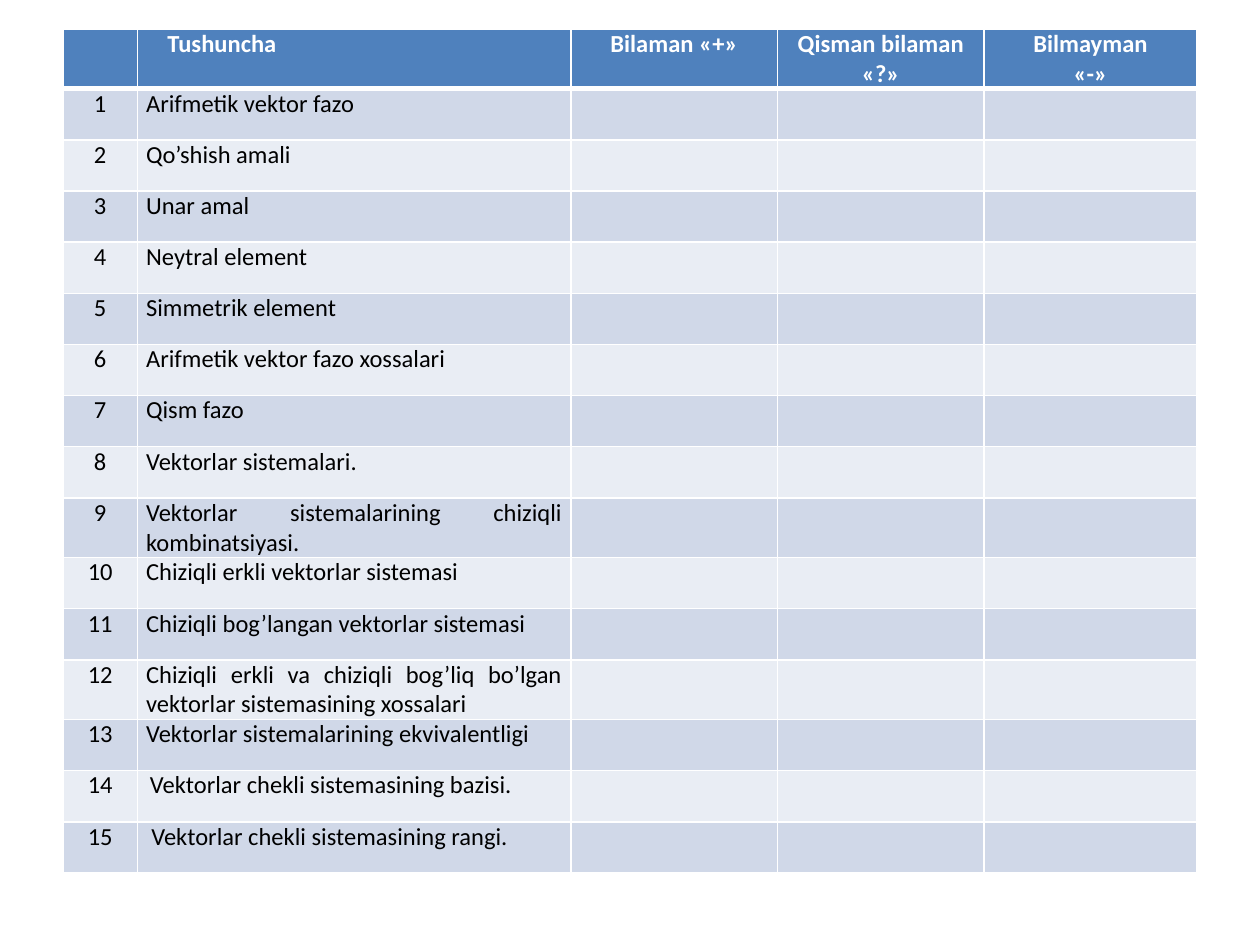
from dataclasses import dataclass

from lxml import etree
from pptx import Presentation
from pptx.dml.color import RGBColor
from pptx.enum.text import PP_ALIGN
from pptx.oxml.ns import qn
from pptx.util import Pt

LEFT, MID, JUST = PP_ALIGN.LEFT, PP_ALIGN.CENTER, PP_ALIGN.JUSTIFY
BLANK = 6

WIDTHS = (42.5, 247.7, 118.1, 118.1, 121.6)
ROW = 29.25
HEADS = ("", "Tushuncha", "Bilaman «+»", "Qisman bilaman\n«?»", "Bilmayman\n«-»")
TERMS = (
    "Arifmetik vektor fazo",
    "Qo’shish amali",
    "Unar amal",
    "Neytral element",
    "Simmetrik element",
    "Arifmetik vektor fazo xossalari",
    "Qism fazo",
    "Vektorlar sistemalari.",
    "Vektorlar sistemalarining chiziqli kombinatsiyasi.",
    "Chiziqli erkli vektorlar sistemasi",
    "Chiziqli bog’langan vektorlar sistemasi",
    "Chiziqli erkli va chiziqli bog’liq bo’lgan vektorlar sistemasining xossalari",
    "Vektorlar sistemalarining ekvivalentligi",
    "Vektorlar chekli sistemasining bazisi.",
    "Vektorlar chekli sistemasining rangi.",
)
# First-line indents by (row, column)
INDENTS = {(0, 1): 12.2, (14, 1): 2.2, (15, 1): 3}


@dataclass(frozen=True)
class Theme:
    font: str = "Calibri"
    size: float = 14
    head: str = "4F81BD"
    bands: tuple = ("E9EDF4", "D0D8E8")
    light: str = "FFFFFF"
    dark: str = "000000"
    thin: float = 1
    thick: float = 3


class Deck:
    """Holds the theme and the current slide."""

    def __init__(self, theme, slide):
        self.theme, self.slide = theme, slide

    def edge(self, cell, sides):
        """Draw cell borders; must run before the fill, as the schema orders them."""
        props = cell._tc.get_or_add_tcPr()
        for side, width in sides.items():
            line = etree.SubElement(props, qn(f"a:ln{side}"), w=str(Pt(width)))
            fill = etree.SubElement(line, qn("a:solidFill"))
            etree.SubElement(fill, qn("a:srgbClr"), val=self.theme.light)

    def label(self, cell, text, align, color, bold, indent):
        form = {"margin_left": Pt(5), "margin_right": Pt(5),
                "margin_top": 0, "margin_bottom": 0}
        for name, value in form.items():
            setattr(cell, name, value)
        cell.text = text
        face = {"name": self.theme.font, "size": Pt(self.theme.size), "bold": bold}
        for para in cell.text_frame.paragraphs:
            para.alignment = align
            for name, value in face.items():
                setattr(para.font, name, value)
            para.font.color.rgb = RGBColor.from_string(color)
            if indent:
                props = para._p.get_or_add_pPr()
                props.set("marL", "0")
                props.set("indent", str(Pt(indent)))

    def table(self, left, top, widths, height, rows, indents):
        """Build a table with one header row and banded body rows."""
        look = self.theme
        grid = self.slide.shapes.add_table(
            len(rows), len(widths), Pt(left), Pt(top),
            Pt(sum(widths)), Pt(height * len(rows))).table
        for col, width in zip(grid.columns, widths):
            col.width = Pt(width)
        for r, texts in enumerate(rows):
            grid.rows[r].height = Pt(height)
            head = r == 0
            shade = look.head if head else look.bands[r % 2]
            color = look.light if head else look.dark
            sides = {"L": look.thin, "R": look.thin,
                     "T": look.thick if r == 1 else look.thin,
                     "B": look.thick if head else look.thin}
            for c, text in enumerate(texts):
                cell = grid.cell(r, c)
                self.edge(cell, sides)
                cell.fill.solid()
                cell.fill.fore_color.rgb = RGBColor.from_string(shade)
                align = MID if c != 1 else LEFT if head else JUST
                self.label(cell, text, align, color, head, indents.get((r, c)))


def main():
    show = Presentation()
    show.slide_width, show.slide_height = Pt(720), Pt(540)
    deck = Deck(Theme(), show.slides.add_slide(show.slide_layouts[BLANK]))
    body = [(str(n), term, "", "", "") for n, term in enumerate(TERMS, 1)]
    deck.table(36, 16.6, WIDTHS, ROW, [HEADS, *body], INDENTS)
    show.save("out.pptx")


if __name__ == "__main__":
    main()
